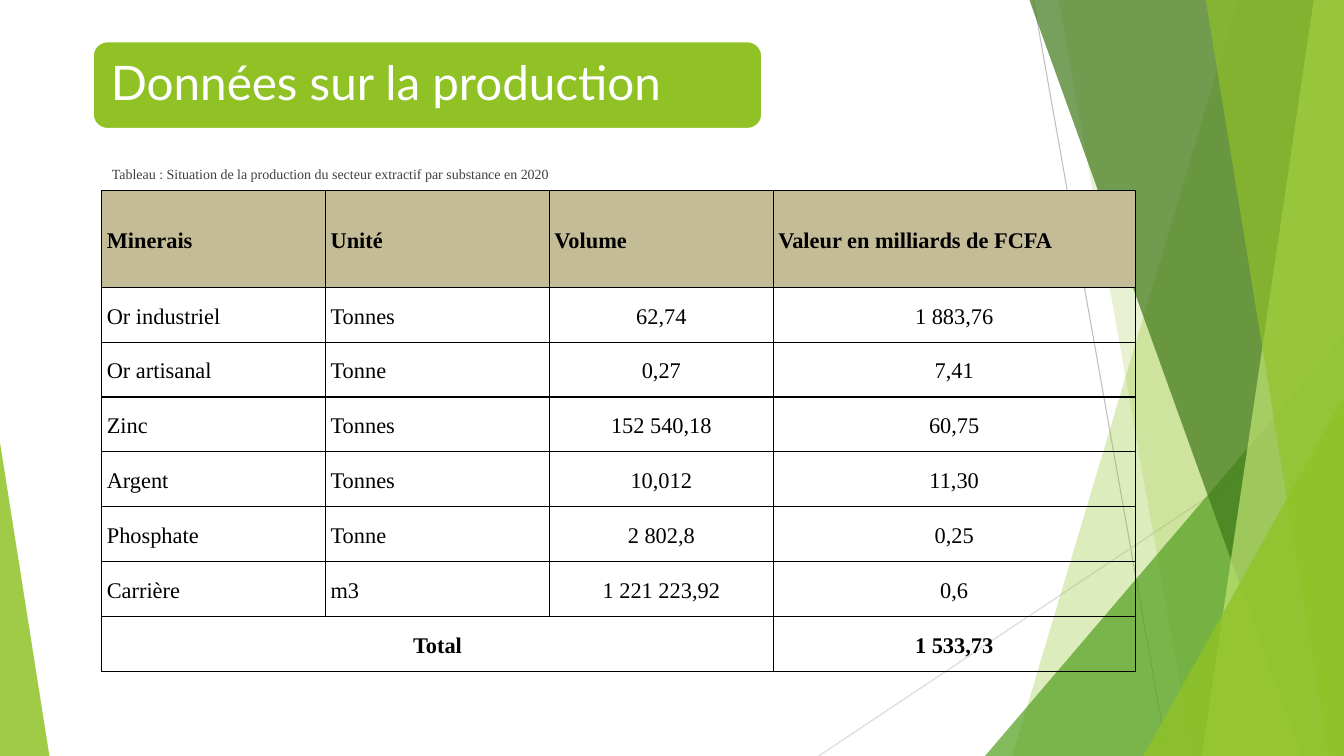
from lxml import etree
from pptx import Presentation
from pptx.dml.color import RGBColor
from pptx.enum.shapes import MSO_CONNECTOR, MSO_SHAPE
from pptx.enum.text import MSO_ANCHOR, MSO_AUTO_SIZE, PP_ALIGN
from pptx.oxml.ns import qn
from pptx.util import Inches, Pt

LEFT, CENTER, JUSTIFY = PP_ALIGN.LEFT, PP_ALIGN.CENTER, PP_ALIGN.JUSTIFY
TOP, MIDDLE = MSO_ANCHOR.TOP, MSO_ANCHOR.MIDDLE
TRIANGLE, ROUNDED = MSO_SHAPE.ISOSCELES_TRIANGLE, MSO_SHAPE.ROUNDED_RECTANGLE

LIME = RGBColor(0x90, 0xC2, 0x26)
PALE_LIME = RGBColor(0xC0, 0xE4, 0x74)
GREEN = RGBColor(0x54, 0xA0, 0x21)
DARK_GREEN = RGBColor(0x3F, 0x78, 0x19)
SAND = RGBColor(0xC4, 0xBC, 0x96)
SILVER = RGBColor(0xBF, 0xBF, 0xBF)
LIGHT_GREY = RGBColor(0xD9, 0xD9, 0xD9)
CHARCOAL = RGBColor(0x40, 0x40, 0x40)
BLACK = RGBColor(0, 0, 0)
WHITE = RGBColor(0xFF, 0xFF, 0xFF)
SERIF, SANS = "Times New Roman", "Lato"

W, H = 13.33, 7.5

TITLE = "Données sur la production"
CAPTION = "Tableau : Situation de la production du secteur extractif par substance en 2020"
ROWS = [
    ("Minerais", "Unité", "Volume", "Valeur en milliards de FCFA"),
    ("Or industriel", "Tonnes", "62,74", "1 883,76"),
    ("Or artisanal", "Tonne", "0,27", "7,41"),
    ("Zinc", "Tonnes", "152 540,18", "60,75"),
    ("Argent", "Tonnes", "10,012", "11,30"),
    ("Phosphate", "Tonne", "2 802,8", "0,25"),
    ("Carrière", "m3", "1 221 223,92", "0,6"),
    ("Total", "", "", "1 533,73"),
]
COLUMNS = (2.22, 2.22, 2.22, 3.59)
TABLE_LEFT, TABLE_TOP, TABLE_HEIGHT, HEADER_HEIGHT = 1.01, 1.89, 4.77, 0.96

RAYS = [
    ((10.25, 0), (11.58, H), SILVER),
    ((W, 4.03), (8.12, H), LIGHT_GREY),
]
# Bands run from the top edge to the bottom edge and close on the right side.
FACETS = [
    ("band", 12.28, 10.04, LIME, 30),
    ("band", 10.5, 11.83, LIME, 20),
    ("right", 9.77, 3.33, GREEN, 72),
    ("band", 10.21, 12.91, DARK_GREEN, 70),
    ("band", 13.03, 11.92, PALE_LIME, 70),
    ("band", 11.96, 13.18, LIME, 65),
    ("right", 11.34, 3.93, LIME, 80),
    ("left", 0.49, 4.39, LIME, 85),
]


def box(*lengths):
    return [Inches(v) for v in lengths]


def paint(sp, color, opacity=100):
    sp.shadow.inherit = False
    sp.line.fill.background()
    sp.fill.solid()
    sp.fill.fore_color.rgb = color
    if opacity < 100:
        clr = sp.element.spPr.find(".//" + qn("a:srgbClr"))
        etree.SubElement(clr, qn("a:alpha"), val=str(opacity * 1000))


def write(tf, text, font=SERIF, size=16, color=BLACK, bold=False, align=LEFT, spacing=1.0):
    p = tf.paragraphs[0]
    p.alignment, p.line_spacing, p.space_before = align, spacing, Pt(0)
    r = p.add_run()
    r.text = text
    r.font.name, r.font.size, r.font.bold = font, Pt(size), bold
    r.font.color.rgb = color
    return p


def place(sp, bounds, anchor, inset_x, inset_y):
    sp.left, sp.top, sp.width, sp.height = box(*bounds)
    tf = sp.text_frame
    tf.word_wrap, tf.auto_size, tf.vertical_anchor = True, MSO_AUTO_SIZE.NONE, anchor
    tf.margin_left = tf.margin_right = Inches(inset_x)
    tf.margin_top = tf.margin_bottom = Inches(inset_y)
    return tf


def border(cell):
    tcPr = cell._tc.get_or_add_tcPr()
    for side in ("a:lnL", "a:lnR", "a:lnT", "a:lnB"):
        ln = etree.SubElement(tcPr, qn(side), w=str(Pt(1)))
        fill = etree.SubElement(ln, qn("a:solidFill"))
        etree.SubElement(fill, qn("a:srgbClr"), val=str(BLACK))


def add_backdrop(s):
    for start, end, color in RAYS:
        line = s.shapes.add_connector(MSO_CONNECTOR.STRAIGHT, *box(*start, *end))
        line.line.color.rgb, line.line.width = color, Pt(0.75)
        etree.SubElement(line.element.spPr, qn("a:effectLst"))
    for kind, x, y, color, opacity in FACETS:
        if kind == "band":
            builder = s.shapes.build_freeform(*box(x, 0), scale=1.0)
            corners = [box(W, 0), box(W, H), box(y, H)]
            builder.add_line_segments(corners, close=True)
            sp = builder.convert_to_shape()
        else:
            left, right = (x, W) if kind == "right" else (0, x)
            sp = s.shapes.add_shape(TRIANGLE, *box(left, y, right - left, H - y))
            sp.adjustments[0] = 1 if kind == "right" else 0
        paint(sp, color, opacity)


def add_heading(s):
    banner = s.shapes.add_shape(ROUNDED, *box(0.92, 0.41, 6.64, 0.87))
    paint(banner, LIME)
    banner.line.color.rgb, banner.line.width = WHITE, Pt(1.5)

    title, caption = s.shapes.title, s.placeholders[1]
    for sp in (title, caption):
        s.shapes.element.append(sp.element)
    tf = place(title, (0.96, 0.45, 6.55, 0.79), MIDDLE, 0.14, 0.14)
    write(tf, TITLE, font=SANS, size=34, color=WHITE, spacing=0.9)

    tf = place(caption, (TABLE_LEFT, 1.59, 11.5, 4.76), TOP, 0.1, 0.05)
    p = write(tf, CAPTION, size=10, color=CHARCOAL)
    pPr = p._p.get_or_add_pPr()
    pPr.set("marL", "0")
    pPr.set("indent", "0")
    etree.SubElement(pPr, qn("a:buNone"))


def add_production_table(s):
    bounds = box(TABLE_LEFT, TABLE_TOP, sum(COLUMNS), TABLE_HEIGHT)
    table = s.shapes.add_table(len(ROWS), len(COLUMNS), *bounds).table
    table.first_row = table.horz_banding = False
    last = len(ROWS) - 1
    for column, width in zip(table.columns, COLUMNS):
        column.width = Inches(width)
    for i, row in enumerate(table.rows):
        row.height = Inches(HEADER_HEIGHT if i == 0 else (TABLE_HEIGHT - HEADER_HEIGHT) / last)
    table.cell(last, 0).merge(table.cell(last, 2))

    for i, values in enumerate(ROWS):
        for j, value in enumerate(values):
            cell = table.cell(i, j)
            border(cell)
            if i == 0:
                cell.fill.solid()
                cell.fill.fore_color.rgb = SAND
            else:
                cell.fill.background()
            if cell.is_spanned:
                continue
            cell.vertical_anchor = MIDDLE
            cell.margin_left = cell.margin_right = Inches(0.05)
            cell.margin_top = cell.margin_bottom = 0
            centered = i == last or (i > 0 and j > 1)
            write(cell.text_frame, value, bold=i in (0, last),
                  align=CENTER if centered else JUSTIFY, spacing=1.15)


def main():
    prs = Presentation()
    prs.slide_width, prs.slide_height = box(W, H)
    s = prs.slides.add_slide(prs.slide_layouts[1])
    add_backdrop(s)
    add_heading(s)
    add_production_table(s)
    prs.save("out.pptx")


if __name__ == "__main__":
    main()
